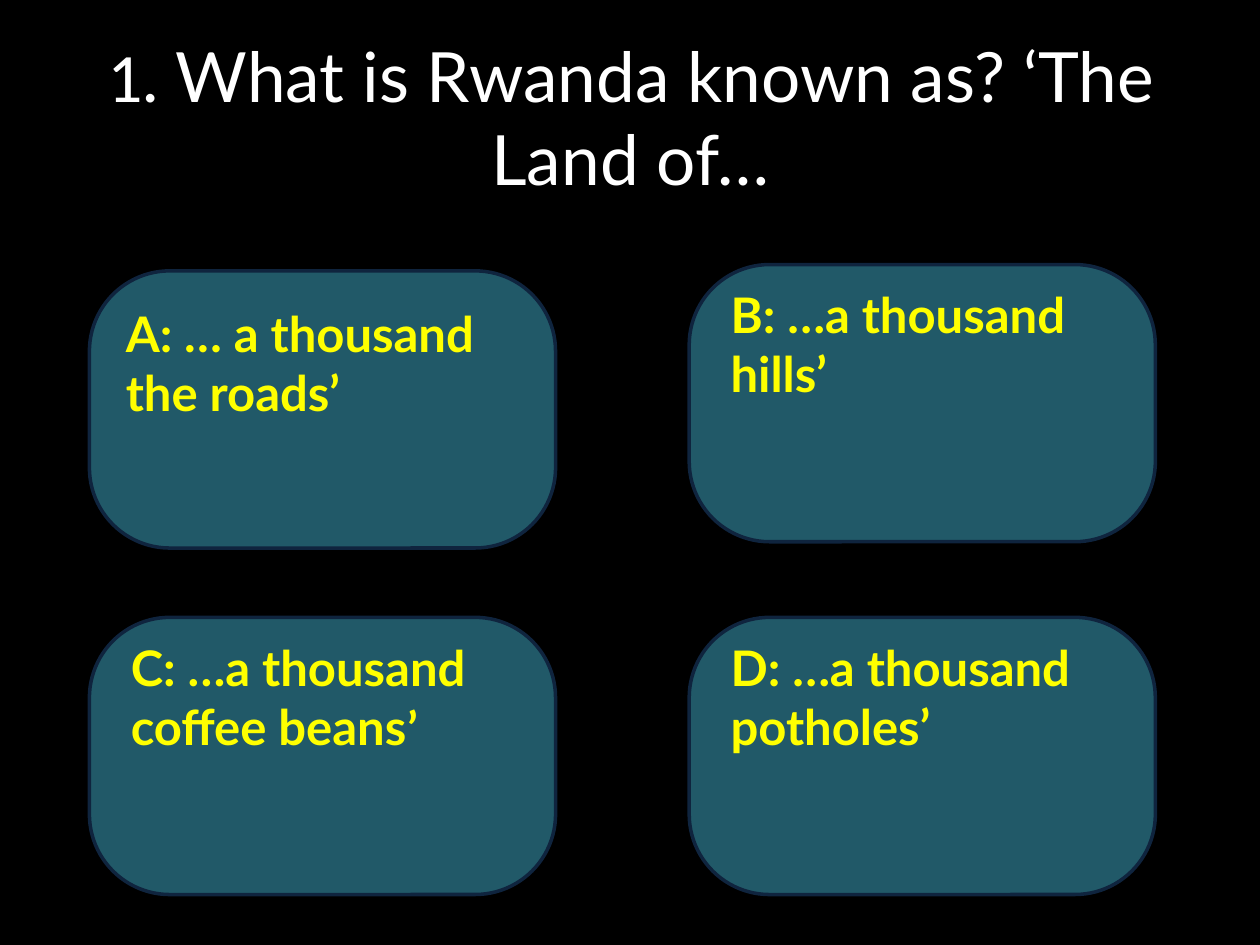
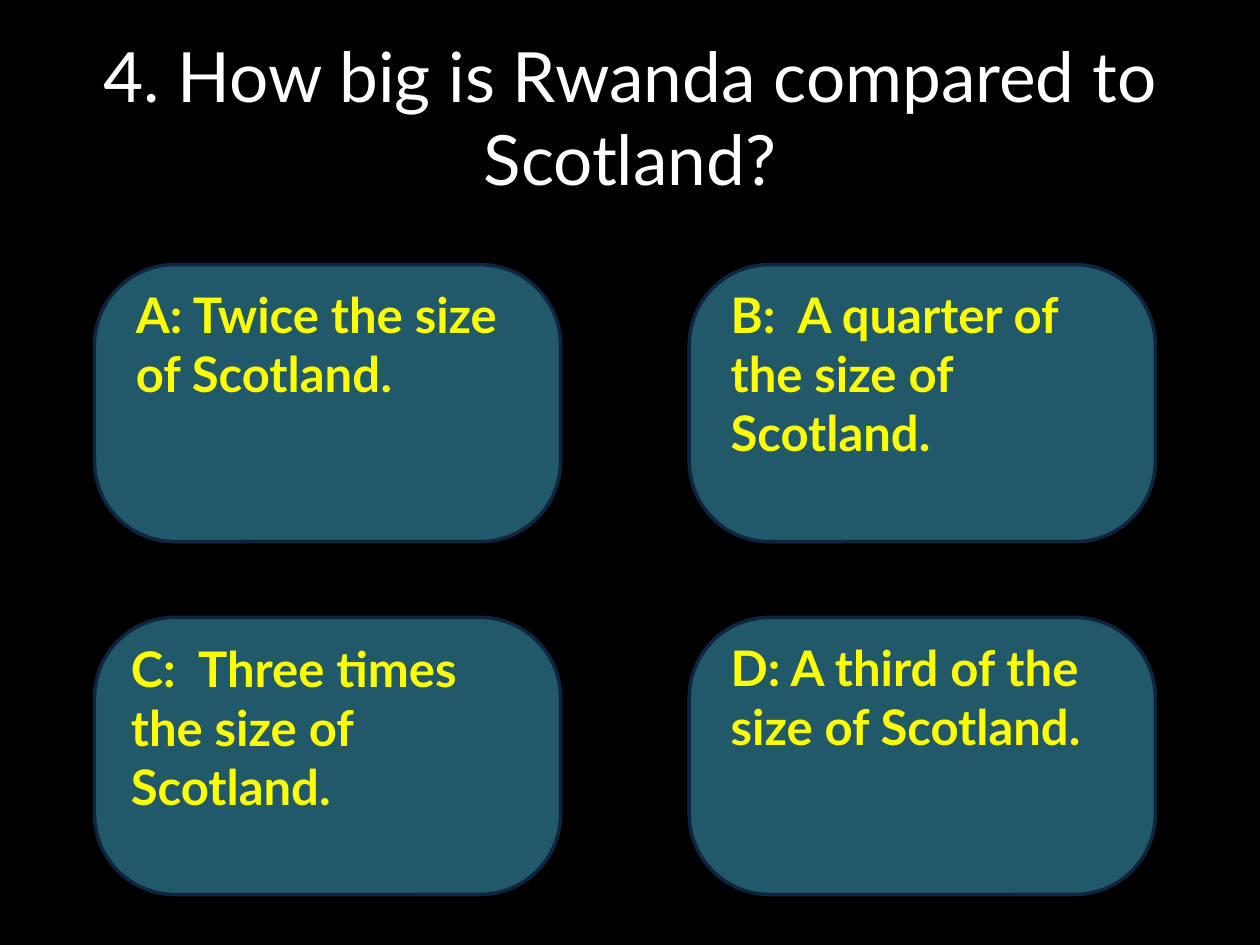
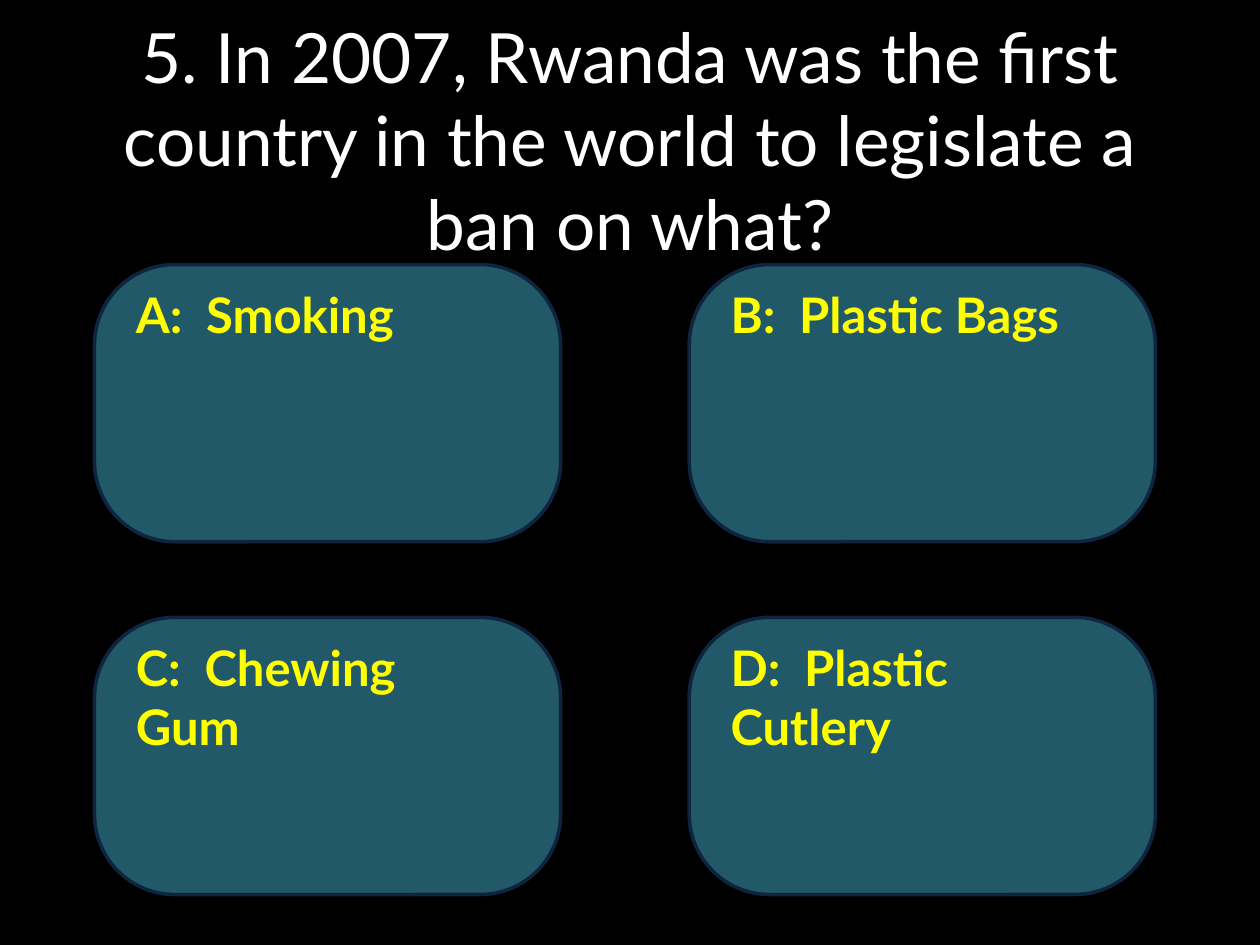
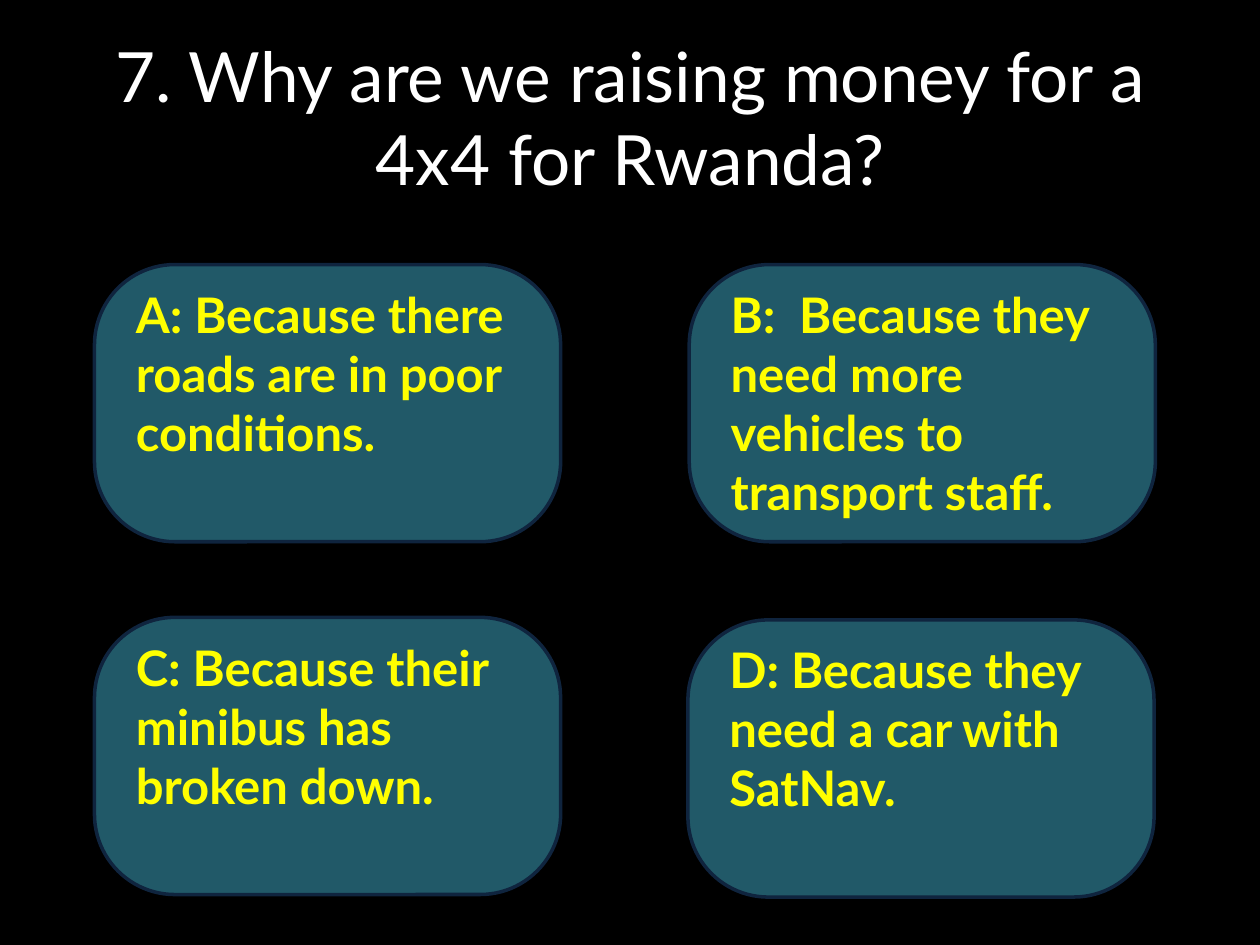
from dataclasses import dataclass
from typing import Any

import pptx
import pptx.dml.color
import pptx.enum.shapes
import pptx.enum.text
import pptx.util

SCALE = 9144  # EMU in one px, 100 px to the inch
COLORS = {"back": "000000", "title": "FFFFFF", "card": "215968",
          "edge": "0F243E", "label": "FFFF00"}
FONT, ALT = "Lato", "Calibri"
COLS, ROWS = (75, 547), (210, 490)
CARD_W, CARD_H = 370, 220
LINE_H, PAD = 47, 10


@dataclass(frozen=True)
class Span:
    text: str
    font: str = FONT


@dataclass(frozen=True)
class Card:
    spans: tuple[Span, ...]
    lines: int  # height of the label, in lines
    shift: tuple[int, int] = (0, 0)  # offset from the grid
    inset: tuple[int, int] = (23, 11)  # label from the card's corner
    width: int = 315


@dataclass(frozen=True)
class Quiz:
    title: tuple[Span, ...]
    cards: tuple[Card, ...]
    box: tuple[int, int, int, int] = (50, 30, 900, 125)


QUIZZES = (
    Quiz((Span("1", ALT), Span(". What is Rwanda known as? ‘The Land of…")), (
        Card((Span("A: … a thousand the roads’"),), 3, (-4, 5), (19, 21)),
        Card((Span("B: …a thousand hills’"),), 2),
        Card((Span("C: …a thousand coffee beans"), Span("’", ALT)), 3, (-4, 0)),
        Card((Span("D: …a thousand potholes’"),), 2),
    ), (20, 30, 961, 125)),
    Quiz((Span("4. How big is Rwanda compared to Scotland?"),), (
        Card((Span("A: Twice the size of Scotland"), Span(".", ALT)), 3),
        Card((Span("B:  A quarter of the size of Scotland."),), 3),
        Card((Span("C:  Three times the size of Scotland."),), 3,
             inset=(19, 12), width=331),
        Card((Span("D: A third of the size of Scotland."),), 3),
    )),
    Quiz((Span("5. In 2007, Rwanda was the first country in the world "
               "to legislate a ban on what?"),), (
        Card((Span("A:  Smoking"),), 1),
        Card((Span("B:  Plastic Bags"),), 1),
        Card((Span("C:  Chewing Gum"),), 2),
        Card((Span("D:  Plastic Cutlery"),), 2),
    ), (50, 48, 900, 125)),
    Quiz((Span("7. Why are we raising money for a 4x4 for Rwanda?"),), (
        Card((Span("A: Because there roads are in poor conditions."),), 4),
        Card((Span("B:  Because they need more vehicles to transport staff."),), 4),
        Card((Span("C: Because their minibus has broken down."),), 4),
        Card((Span("D: Because they need a car with SatNav."),), 3, (-1, 2)),
    )),
)


def px(count: int) -> pptx.util.Emu:
    return pptx.util.Emu(count * SCALE)


def color(name: str) -> pptx.dml.color.RGBColor:
    return pptx.dml.color.RGBColor.from_string(COLORS[name])


def write(frame: Any, spans: tuple[Span, ...], size: float, tint: str,
          bold: bool, align: Any) -> None:
    """Fill a text frame with one paragraph."""
    frame.word_wrap = True
    para = frame.paragraphs[0]
    para.alignment = align
    para.font.size = pptx.util.Pt(size)
    para.font.bold = bold
    para.font.color.rgb = color(tint)
    fonts = {span.font for span in spans}
    if len(fonts) == 1:
        para.font.name = spans[0].font
    for span in spans:
        run = para.add_run()
        run.text = span.text
        if len(fonts) > 1:
            run.font.name = span.font


def draw_title(slide: Any, quiz: Quiz) -> None:
    title = slide.shapes.title
    title.left, title.top, title.width, title.height = map(px, quiz.box)
    frame = title.text_frame
    frame.auto_size = pptx.enum.text.MSO_AUTO_SIZE.NONE
    frame.vertical_anchor = pptx.enum.text.MSO_ANCHOR.MIDDLE
    write(frame, quiz.title, 39.6, "title", False, pptx.enum.text.PP_ALIGN.CENTER)


def draw_card(slide: Any, card: Card, col: int, row: int) -> None:
    left, top = COLS[col] + card.shift[0], ROWS[row] + card.shift[1]
    group = slide.shapes.add_group_shape()
    # Rounded panel
    panel = group.shapes.add_shape(
        pptx.enum.shapes.MSO_SHAPE.ROUNDED_RECTANGLE,
        px(left), px(top), px(CARD_W), px(CARD_H))
    panel.adjustments[0] = 0.29
    panel.shadow.inherit = False
    panel.fill.solid()
    panel.fill.fore_color.rgb = color("card")
    panel.line.color.rgb = color("edge")
    panel.line.width = pptx.util.Pt(2)
    # Answer label
    label = group.shapes.add_textbox(
        px(left + card.inset[0]), px(top + card.inset[1]),
        px(card.width), px(card.lines * LINE_H + PAD))
    write(label.text_frame, card.spans, 28, "label", True,
          pptx.enum.text.PP_ALIGN.LEFT)
    label.text_frame.auto_size = pptx.enum.text.MSO_AUTO_SIZE.SHAPE_TO_FIT_TEXT


def main() -> None:
    deck = pptx.Presentation()
    deck.slide_width, deck.slide_height = px(1000), px(750)
    # Shared black background
    fill = deck.slide_master.background.fill
    fill.solid()
    fill.fore_color.rgb = color("back")
    layout = deck.slide_layouts.get_by_name("Title Only")
    for quiz in QUIZZES:
        slide = deck.slides.add_slide(layout)
        draw_title(slide, quiz)
        for index, card in enumerate(quiz.cards):
            row, col = divmod(index, 2)
            draw_card(slide, card, col, row)
    deck.save("out.pptx")


if __name__ == "__main__":
    main()
